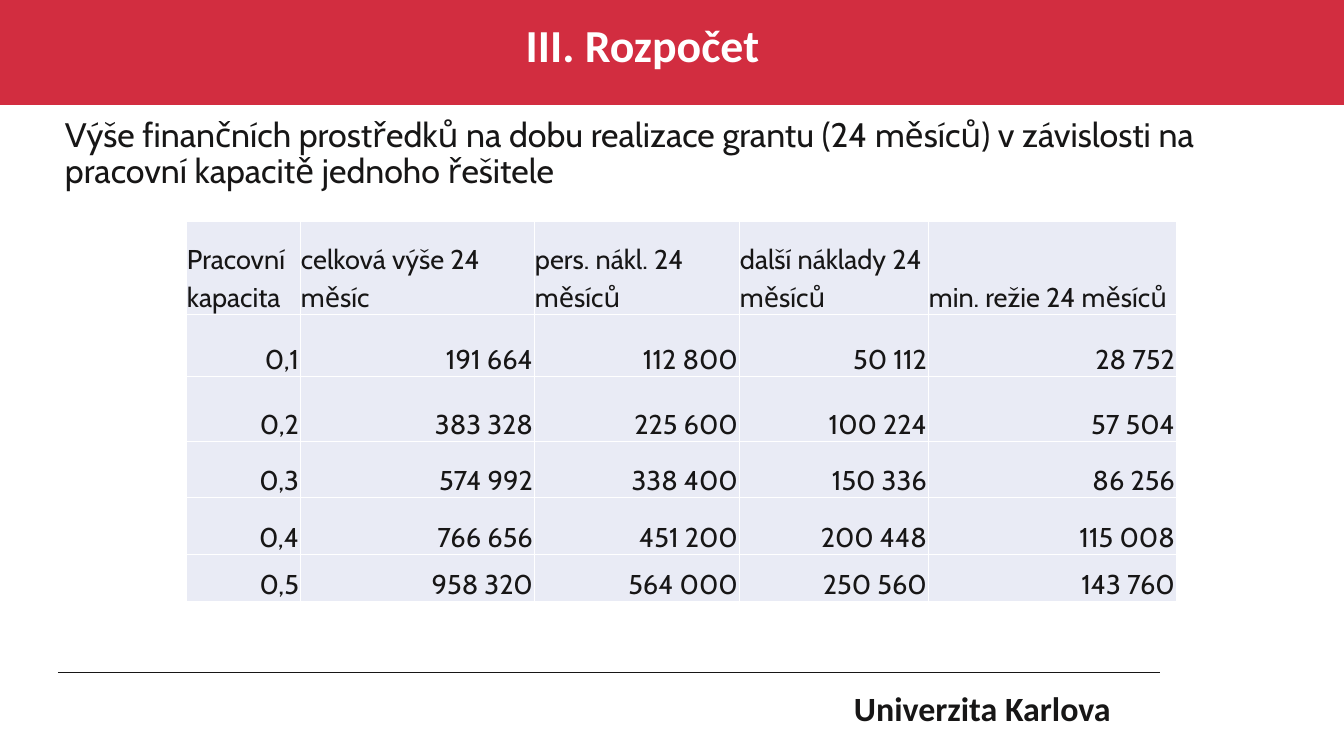
from lxml.etree import SubElement
from pptx import Presentation
from pptx.dml.color import RGBColor
from pptx.enum.shapes import MSO_CONNECTOR as CONN, MSO_SHAPE as SHAPE
from pptx.enum.text import MSO_ANCHOR as ANCHOR, PP_ALIGN as ALIGN
from pptx.oxml.ns import qn
from pptx.util import Emu, Pt

SCALE = 14966
INK, RED, WHITE, PALE = "171616", "D22D40", "FFFFFF", "E9EBF5"
HEAD, BODY = "Calibri", "Cabin"


def px(n):
    return Emu(n * SCALE)


def rgb(color):
    return RGBColor.from_string(color)


class Deck:
    def __init__(self, w, h):
        self.prs = Presentation()
        self.prs.slide_width, self.prs.slide_height = px(w), px(h)
        self.s = self.prs.slides.add_slide(self.prs.slide_layouts[6])

    def style(self, p, size, font=BODY, color=INK, bold=False, align=ALIGN.LEFT, spacing=1.0):
        p.alignment, p.line_spacing = align, spacing
        p.font.size, p.font.name, p.font.bold = Pt(size), font, bold
        p.font.color.rgb = rgb(color)

    def bar(self, x, y, w, h, color):
        sp = self.s.shapes.add_shape(SHAPE.RECTANGLE, px(x), px(y), px(w), px(h))
        sp.shadow.inherit = False
        sp.fill.solid()
        sp.fill.fore_color.rgb = rgb(color)
        sp.line.fill.background()

    def line(self, x1, y1, x2, y2, color, width):
        c = self.s.shapes.add_connector(CONN.STRAIGHT, px(x1), px(y1), px(x2), px(y2))
        c.line.color.rgb, c.line.width = rgb(color), Pt(width)
        SubElement(c._element.spPr, qn("a:effectLst"))

    def text(self, x, y, w, h, text, size, inset=(6, 3), **style):
        tf = self.s.shapes.add_textbox(px(x), px(y), px(w), px(h)).text_frame
        tf.word_wrap = True
        tf.margin_left = tf.margin_right = px(inset[0])
        tf.margin_top = tf.margin_bottom = px(inset[1])
        p = tf.paragraphs[0]
        p.text = text
        self.style(p, size, **style)

    def border(self, cell, color, width):
        tcPr = cell._tc.get_or_add_tcPr()
        for side in ("lnL", "lnR", "lnT", "lnB"):
            ln = SubElement(tcPr, qn(f"a:{side}"), w=str(Pt(width)))
            SubElement(SubElement(ln, qn("a:solidFill")), qn("a:srgbClr"), val=color)

    def table(self, x, y, widths, heights, rows, size):
        frame = self.s.shapes.add_table(len(heights), len(widths), px(x), px(y),
                                        px(sum(widths)), px(sum(heights)))
        t = frame.table
        t.first_row = t.horz_banding = False
        for col, w in zip(t.columns, widths):
            col.width = px(w)
        for row, h in zip(t.rows, heights):
            row.height = px(h)
        for i, row in enumerate(rows):
            for j, value in enumerate(row):
                cell = t.cell(i, j)
                self.border(cell, WHITE, 1)
                cell.fill.solid()
                cell.fill.fore_color.rgb = rgb(PALE)
                cell.vertical_anchor = ANCHOR.BOTTOM
                cell.margin_left = cell.margin_right = cell.margin_top = px(1)
                cell.margin_bottom = 0
                p = cell.text_frame.paragraphs[0]
                p.text = value
                self.style(p, size, align=ALIGN.RIGHT if i else ALIGN.LEFT, spacing=1.15)


def main():
    header = ["Pracovní kapacita", "celková výše 24 měsíc", "pers. nákl. 24 měsíců",
              "další náklady 24 měsíců", "min. režie 24 měsíců"]
    per_tenth = [191664, 112800, 50112, 28752]
    rows = [header]
    for k in range(1, 6):
        rows.append([f"0,{k}"] + [f"{n * k:,}".replace(",", " ") for n in per_tenth])

    deck = Deck(1344, 756)
    deck.line(58, 672, 1160, 672, INK, 0.5)
    deck.bar(0, 0, 1344, 105, RED)
    deck.text(854, 688, 322, 55, "Univerzita Karlova", 40, inset=(0, 0), font=HEAD, bold=True)
    deck.text(17, 20, 1251, 68, "III. Rozpočet", 54, font=HEAD, color=WHITE, bold=True,
              align=ALIGN.CENTER, spacing=0.9)
    deck.text(59, 115, 1223, 80, "Výše finančních prostředků na dobu realizace grantu (24 měsíců) "
              "v závislosti na pracovní kapacitě jednoho řešitele", 40, spacing=0.9)
    deck.table(186, 221, [114, 234, 205, 189, 248], [93, 62, 65, 56, 57, 47], rows, 32)
    deck.prs.save("out.pptx")


if __name__ == "__main__":
    main()
